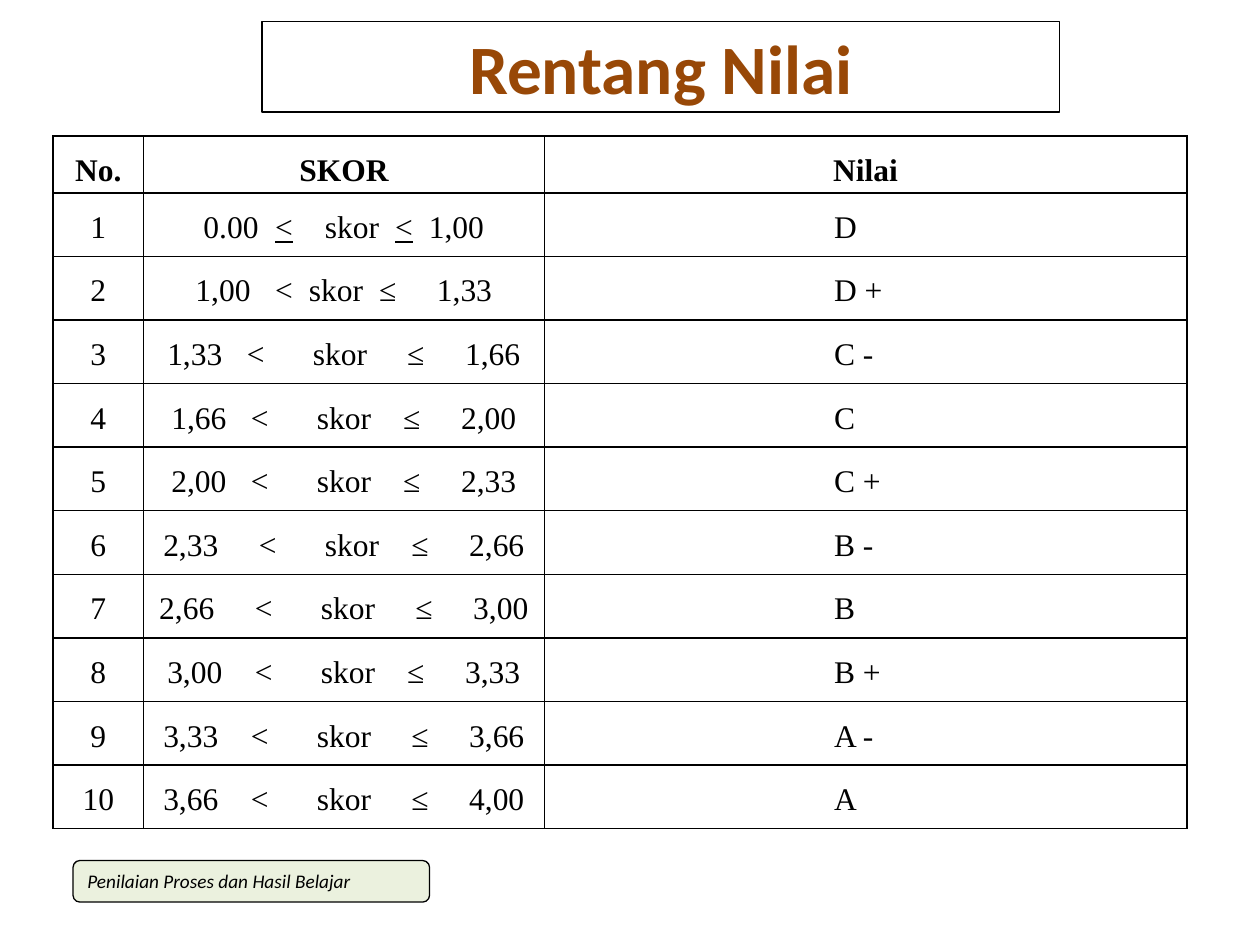
from dataclasses import dataclass
from itertools import accumulate

from lxml import etree
from pptx import Presentation
from pptx.dml.color import RGBColor
from pptx.enum.shapes import MSO_SHAPE
from pptx.enum.text import MSO_ANCHOR, MSO_AUTO_SIZE, PP_ALIGN
from pptx.oxml.ns import qn
from pptx.util import Inches, Pt

CENTER, LEFT = PP_ALIGN.CENTER, PP_ALIGN.LEFT
MIDDLE = MSO_ANCHOR.MIDDLE
TITLE_ONLY = 5


@dataclass(frozen=True)
class Theme:
    black: RGBColor = RGBColor(0, 0, 0)
    brown: RGBColor = RGBColor(0x98, 0x48, 0x07)
    pale_green: RGBColor = RGBColor(0xEB, 0xF1, 0xDE)
    heading_font: str = "Calibri"
    table_font: str = "Times New Roman"
    title_size: float = 39.6
    table_size: float = 18
    footer_size: float = 11


THEME = Theme()
COLUMNS = (0.72, 3.18, 5.1)
HEADER_HEIGHT, TABLE_HEIGHT = 0.45, 5.5
CELL_MARGIN = 0.05
GRADE_INDENT = 2.3
SPACE = Pt(4.6)
PART_WIDTHS = [Inches(width) for width in (0.44, 0.14, 0.43, 0.14, 0.44)]

HEADERS = ("No.", "SKOR", "Nilai")
# Lower bound, upper bound, gaps between the five parts in spaces, grade
RANGES = (
    ("0.00", "1,00", (2, 4, 2, 2), "D"),
    ("1,00", "1,33", (3, 2, 2, 5), "D +"),
    ("1,33", "1,66", (3, 6, 5, 5), "C -"),
    ("1,66", "2,00", (3, 6, 4, 5), "C"),
    ("2,00", "2,33", (3, 6, 4, 5), "C +"),
    ("2,33", "2,66", (5, 6, 4, 5), "B -"),
    ("2,66", "3,00", (5, 6, 5, 5), "B"),
    ("3,00", "3,33", (4, 6, 4, 5), "B +"),
    ("3,33", "3,66", (4, 6, 5, 5), "A -"),
    ("3,66", "4,00", (4, 6, 5, 5), "A"),
)


def set_font(para, name, size, color=THEME.black, bold=False, italic=False):
    font = para.font
    font.name, font.size = name, Pt(size)
    font.bold, font.italic = bold, italic
    font.color.rgb = color


def set_outline(shape):
    shape.line.color.rgb = THEME.black
    shape.line.width = Pt(0.75)


def add_borders(cell):
    properties = cell._tc.get_or_add_tcPr()
    for position, side in enumerate(("lnL", "lnR", "lnT", "lnB")):
        border = etree.Element(qn(f"a:{side}"), w=str(Pt(1)))
        fill = etree.SubElement(border, qn("a:solidFill"))
        etree.SubElement(fill, qn("a:srgbClr"), val=str(THEME.black))
        properties.insert(position, border)


def style_cell(cell, align=CENTER, bold=False, indent=Inches(CELL_MARGIN)):
    cell.margin_left, cell.margin_right = indent, Inches(CELL_MARGIN)
    cell.margin_top = cell.margin_bottom = 0
    cell.fill.background()
    add_borders(cell)
    para = cell.text_frame.paragraphs[0]
    para.alignment, para.line_spacing = align, 1.5
    set_font(para, THEME.table_font, THEME.table_size, bold=bold)


def fill_score(cell, low, high, gaps, underline):
    """Write a score range on tab stops so that it stands centred in its cell."""
    steps = [width + gap * SPACE for width, gap in zip(PART_WIDTHS, gaps)]
    indent = (Inches(COLUMNS[1]) - sum(steps) - PART_WIDTHS[-1]) // 2
    para = cell.text_frame.paragraphs[0]
    tabs = etree.SubElement(para._p.get_or_add_pPr(), qn("a:tabLst"))
    for stop in accumulate(steps):
        etree.SubElement(tabs, qn("a:tab"), pos=str(stop), algn="l")
    signs = ("˂", "˂") if underline else ("˂", "≤")
    for text in (low, "\t", signs[0], "\tskor\t", signs[1], f"\t{high}"):
        span = para.add_run()
        span.text = text
        if underline and text in signs:
            span.font.underline = True
    style_cell(cell, LEFT, indent=indent)


def add_title(page, text):
    title = page.shapes.title
    title.left, title.top = Inches(2.08), Inches(0.17)
    title.width, title.height = Inches(6.33), Inches(0.72)
    set_outline(title)
    frame = title.text_frame
    frame.text = text
    frame.auto_size = MSO_AUTO_SIZE.NONE
    frame.vertical_anchor = MIDDLE
    para = frame.paragraphs[0]
    para.alignment = CENTER
    set_font(para, THEME.heading_font, THEME.title_size, THEME.brown, bold=True)


def add_grade_table(page):
    frame = page.shapes.add_table(
        len(RANGES) + 1, len(COLUMNS), Inches(0.42), Inches(1.08),
        Inches(sum(COLUMNS)), Inches(TABLE_HEIGHT))
    table = frame.table
    table.first_row = table.horz_banding = False
    for column, width in zip(table.columns, COLUMNS):
        column.width = Inches(width)
    body_height = Inches((TABLE_HEIGHT - HEADER_HEIGHT) / len(RANGES))
    for index, row in enumerate(table.rows):
        row.height = body_height if index else Inches(HEADER_HEIGHT)

    for column, text in enumerate(HEADERS):
        cell = table.cell(0, column)
        cell.text = text
        style_cell(cell, bold=True)
    for number, (low, high, gaps, grade) in enumerate(RANGES, 1):
        number_cell, score_cell, grade_cell = table.rows[number].cells
        number_cell.text = str(number)
        style_cell(number_cell)
        fill_score(score_cell, low, high, gaps, underline=number == 1)
        grade_cell.text = grade
        style_cell(grade_cell, LEFT, indent=Inches(GRADE_INDENT))


def add_footer(page, text):
    box = page.shapes.add_shape(
        MSO_SHAPE.ROUNDED_RECTANGLE,
        Inches(0.58), Inches(6.83), Inches(2.83), Inches(0.33))
    box.shadow.inherit = False
    box.fill.solid()
    box.fill.fore_color.rgb = THEME.pale_green
    set_outline(box)
    frame = box.text_frame
    frame.text = text
    frame.word_wrap = True
    frame.vertical_anchor = MIDDLE
    para = frame.paragraphs[0]
    para.alignment = LEFT
    set_font(para, THEME.heading_font, THEME.footer_size, italic=True)


def main():
    deck = Presentation()
    deck.slide_width, deck.slide_height = Inches(10), Inches(7.5)
    page = deck.slides.add_slide(deck.slide_layouts[TITLE_ONLY])
    add_title(page, "Rentang Nilai")
    add_grade_table(page)
    add_footer(page, "Penilaian Proses dan Hasil Belajar")
    deck.save("out.pptx")


if __name__ == "__main__":
    main()
